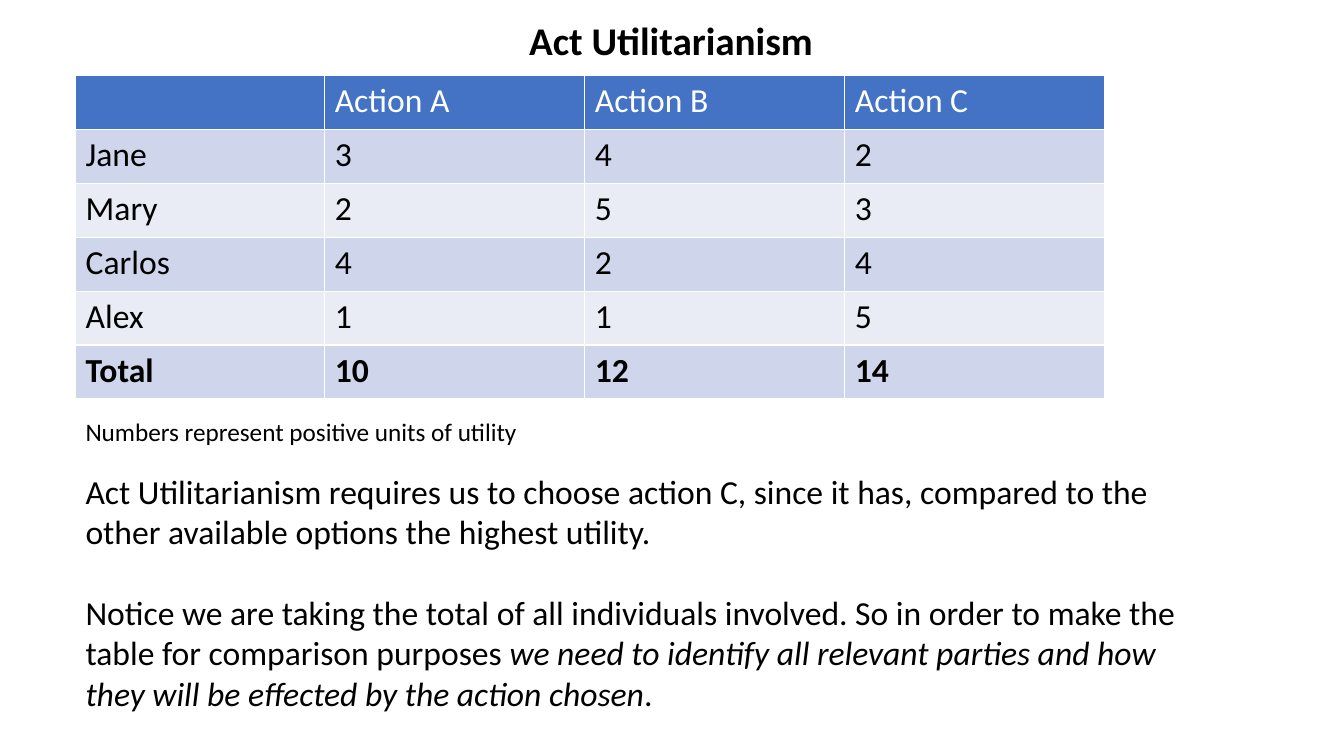
"""Build the Act Utilitarianism slide with its utility table."""
import pptx
import pptx.dml.color
import pptx.enum.text
import pptx.oxml
import pptx.oxml.ns
import pptx.util

Inches, Pt = pptx.util.Inches, pptx.util.Pt
RGBColor = pptx.dml.color.RGBColor
Anchor, Align = pptx.enum.text.MSO_ANCHOR, pptx.enum.text.PP_ALIGN

BLACK = RGBColor(0x00, 0x00, 0x00)
WHITE = RGBColor(0xFF, 0xFF, 0xFF)
HEADER_BLUE = RGBColor(0x44, 0x72, 0xC4)
BANDS = (RGBColor(0xE9, 0xEB, 0xF5), RGBColor(0xCF, 0xD5, 0xEA))

WIDTH, HEIGHT, LEFT = 13.33, 7.5, 0.75
TITLE_BOX = (1.81, 0.11, 9.69, 0.63)
TABLE_BOX = (LEFT, 0.75, 10.21, 3.21)
CAPTION_BOX = (LEFT, 4.08, 4.53, 0.4)
CONCLUSION_BOX = (LEFT, 4.62, 11.34, 2.86)
NAME_SHARE = 0.242

ACTIONS = ("", "Action A", "Action B", "Action C")
UTILITIES = {
    "Jane": (3, 4, 2),
    "Mary": (2, 5, 3),
    "Carlos": (4, 2, 4),
    "Alex": (1, 1, 5),
}
CONCLUSION = (
    (("Act Utilitarianism requires us to choose action C, since it has, compared "
      "to the other available options the highest utility.", False),),
    (("Notice we are taking the total of all individuals involved. So in order to "
      "make the table for comparison purposes ", False),
     ("we need to identify all relevant parties and how they will be effected by "
      "the action chosen", True),
     (".", False)),
)


def write(paragraph, words, size, color=BLACK, **style):
    """Append a formatted run to a paragraph."""
    run = paragraph.add_run()
    run.text = words
    run.font.color.rgb = color
    formats = {"name": "Calibri", "size": Pt(size), "bold": False, "italic": False}
    for key, value in {**formats, **style}.items():
        setattr(run.font, key, value)


def add_frame(slide, box, **settings):
    """Add a text box at the given box and return its text frame."""
    frame = slide.shapes.add_textbox(*map(Inches, box)).text_frame
    for key, value in {"word_wrap": True, **settings}.items():
        setattr(frame, key, value)
    return frame


def add_title(slide, box):
    """Place the centred slide title."""
    heading = add_frame(slide, box, vertical_anchor=Anchor.MIDDLE).paragraphs[0]
    heading.alignment = Align.CENTER
    heading.line_spacing = 0.9
    write(heading, "Act Utilitarianism", 28, bold=True)


def add_borders(cell):
    """Draw thin white lines on all sides of a cell."""
    properties = cell._tc.get_or_add_tcPr()
    for side in "LRTB":
        properties.append(pptx.oxml.parse_xml(
            f'<a:ln{side} {pptx.oxml.ns.nsdecls("a")} w="12700"><a:solidFill>'
            f'<a:srgbClr val="{WHITE}"/></a:solidFill></a:ln{side}>'))


def add_utility_table(slide, box):
    """Place the table of utilities with its row of totals."""
    people = [(name, *units) for name, units in UTILITIES.items()]
    totals = ("Total", *map(sum, zip(*UTILITIES.values())))
    rows = [ACTIONS, *people, totals]
    table = slide.shapes.add_table(len(rows), len(ACTIONS), *map(Inches, box)).table
    action_share = (1 - NAME_SHARE) / (len(ACTIONS) - 1)
    for index, column in enumerate(table.columns):
        column.width = Inches(box[2] * (action_share if index else NAME_SHARE))
    for r, values in enumerate(rows):
        table.rows[r].height = Inches(box[3] / len(rows))
        for c, value in enumerate(values):
            cell = table.cell(r, c)
            add_borders(cell)
            cell.fill.solid()
            cell.fill.fore_color.rgb = BANDS[r % 2] if r else HEADER_BLUE
            if value != "":
                write(cell.text_frame.paragraphs[0], str(value), 24,
                      BLACK if r else WHITE, bold=values is totals)


def add_caption(slide, box):
    """Place the note under the table."""
    caption = add_frame(slide, box, word_wrap=False)
    write(caption.paragraphs[0], "Numbers represent positive units of utility", 18)


def add_conclusion(slide, box):
    """Place the closing paragraphs."""
    frame = add_frame(slide, box)
    for index, passages in enumerate(CONCLUSION):
        paragraph = frame.add_paragraph() if index else frame.paragraphs[0]
        paragraph.space_before = Pt(29 * index)
        for words, italic in passages:
            write(paragraph, words, 24, italic=italic)


def main():
    """Build and save the presentation."""
    deck = pptx.Presentation()
    deck.slide_width, deck.slide_height = Inches(WIDTH), Inches(HEIGHT)
    slide = deck.slides.add_slide(deck.slide_layouts[6])
    add_title(slide, TITLE_BOX)
    add_utility_table(slide, TABLE_BOX)
    add_conclusion(slide, CONCLUSION_BOX)
    add_caption(slide, CAPTION_BOX)
    deck.save("out.pptx")


if __name__ == "__main__":
    main()
